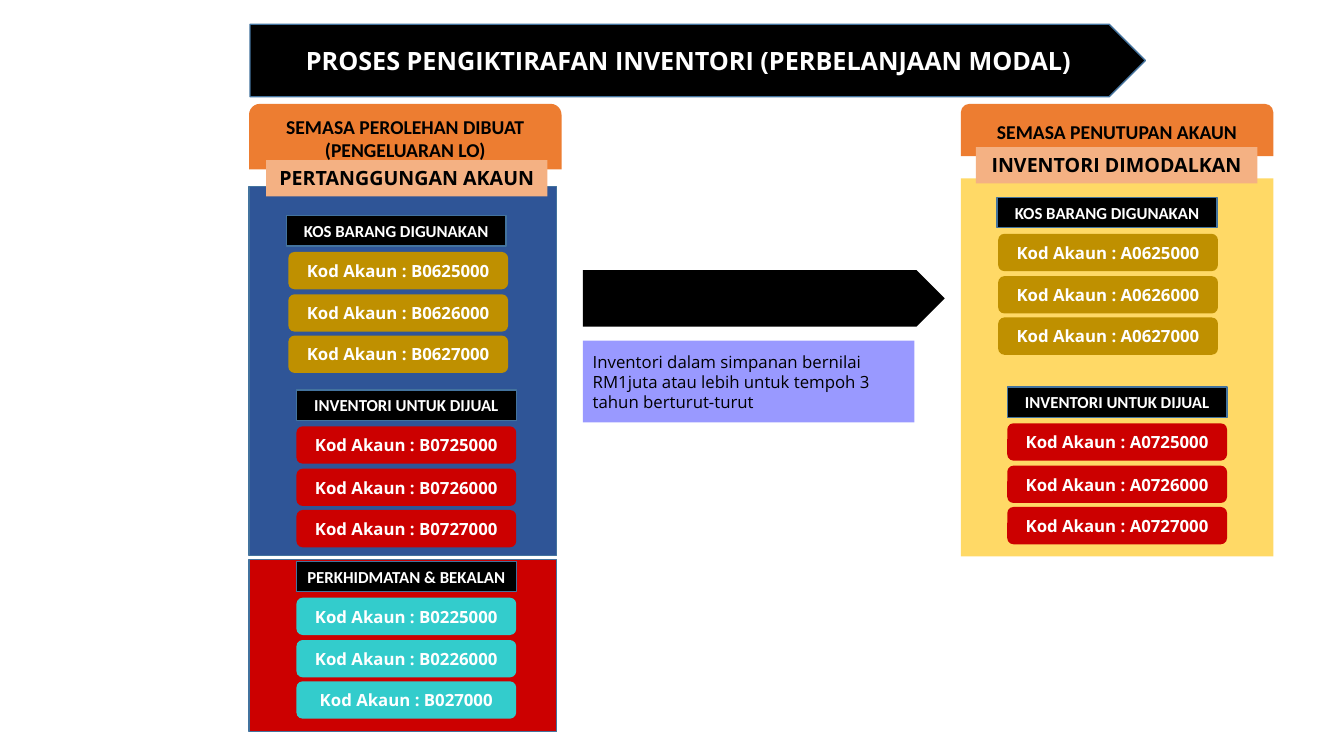
from dataclasses import dataclass

from pptx import Presentation
from pptx.dml.color import RGBColor
from pptx.enum.shapes import MSO_SHAPE
from pptx.enum.text import MSO_ANCHOR, PP_ALIGN
from pptx.util import Emu, Pt

RECT, ROUND = MSO_SHAPE.RECTANGLE, MSO_SHAPE.ROUNDED_RECTANGLE
TAB, ARROW = MSO_SHAPE.ROUND_2_SAME_RECTANGLE, MSO_SHAPE.PENTAGON
TOP, MIDDLE = MSO_ANCHOR.TOP, MSO_ANCHOR.MIDDLE
LEFT, CENTER = PP_ALIGN.LEFT, PP_ALIGN.CENTER
PX = 9144  # 100 px to the inch


@dataclass(frozen=True)
class Theme:
    black: str = "000000"
    white: str = "FFFFFF"
    outline: str = "43739E"
    orange: str = "ED7D31"
    peach: str = "F4B183"
    blue: str = "2F5597"
    yellow: str = "FFD966"
    red: str = "CC0000"
    gold: str = "BF9000"
    teal: str = "33CCCC"
    lilac: str = "9999FF"
    label_font: str = "Calibri"
    code_font: str = "Open Sans"
    title_size: int = 18
    header_size: int = 14
    body_size: int = 12


T = Theme()


def px(n):
    return Emu(n * PX)


def add_box(s, kind, box, fill, outlined=False):
    sp = s.shapes.add_shape(kind, *map(px, box))
    sp.shadow.inherit = False
    sp.fill.solid()
    sp.fill.fore_color.rgb = RGBColor.from_string(fill)
    if outlined:
        sp.line.color.rgb = RGBColor.from_string(T.outline)
        sp.line.width = Pt(1)
    else:
        sp.line.fill.background()
    return sp


def write(sp, text, font, size, color, bold=True, align=CENTER, anchor=MIDDLE, inset=(10, 5)):
    tf = sp.text_frame
    tf.word_wrap = True
    tf.vertical_anchor = anchor
    tf.margin_left = tf.margin_right = px(inset[0])
    tf.margin_top = tf.margin_bottom = px(inset[1])
    p = tf.paragraphs[0]
    p.text = text
    p.alignment = align
    p.font.name, p.font.size, p.font.bold = font, Pt(size), bold
    p.font.color.rgb = RGBColor.from_string(color)


def add_title(s, box, text):
    sp = add_box(s, ARROW, box, T.black, outlined=True)
    write(sp, text, T.code_font, T.title_size, T.white)


def add_stage(s, box, header_h, header, tag_dx, tag):
    """Rounded header with a tag overlapping its lower edge."""
    x, y, w = box
    sp = add_box(s, TAB, (x, y, w, header_h), T.orange)
    write(sp, header, T.label_font, T.header_size, T.black, inset=(12, 6))
    sp = add_box(s, RECT, (x + tag_dx, y + header_h - 9, 279, 36), T.peach)
    write(sp, tag, T.code_font, T.header_size, T.black, anchor=TOP, inset=(12, 6))


def add_code_group(s, origin, label, codes, fill, shift=0):
    """Black label above a stack of account codes."""
    x, y = origin
    sp = add_box(s, RECT, (x, y, 218, 30), T.black, outlined=True)
    write(sp, label, T.label_font, T.body_size, T.white)
    for i, code in enumerate(codes):
        top = y + 36 + (83 * i + 1) // 2
        sp = add_box(s, ROUND, (x + shift, top, 218, 37), fill)
        write(sp, f"Kod Akaun : {code}", T.code_font, T.body_size, T.white)


def add_transition(s, box, note):
    """Arrow between the stages with its condition below."""
    x, y, w = box
    add_box(s, ARROW, (x, y, w, 56), T.black)
    sp = add_box(s, RECT, (x, y + 70, w - 30, 81), T.lilac)
    write(sp, note, T.code_font, T.body_size, T.black, bold=False, align=LEFT)


def main():
    prs = Presentation()
    prs.slide_width, prs.slide_height = px(1333), px(750)
    s = prs.slides.add_slide(prs.slide_layouts[6])

    add_title(s, (248, 24, 888, 72), "PROSES PENGIKTIRAFAN INVENTORI (PERBELANJAAN MODAL)")

    # Panels behind the account codes
    add_box(s, RECT, (247, 555, 305, 171), T.red, outlined=True)
    add_box(s, RECT, (247, 185, 305, 366), T.blue, outlined=True)
    add_box(s, RECT, (953, 177, 310, 375), T.yellow)

    # Stage headings
    add_stage(s, (247, 103, 310), 65, "SEMASA PEROLEHAN DIBUAT (PENGELUARAN LO)",
              17, "PERTANGGUNGAN AKAUN")
    add_stage(s, (953, 103, 310), 52, "SEMASA PENUTUPAN AKAUN",
              15, "INVENTORI DIMODALKAN")

    # Inventory codes, before and after capitalisation
    for prefix, x, kos_y, dijual_y, shift in (("B", 284, 214, 387, 2), ("A", 989, 196, 384, 1)):
        kos = [f"{prefix}062{n}000" for n in (5, 6, 7)]
        dijual = [f"{prefix}072{n}000" for n in (5, 6, 7)]
        add_code_group(s, (x, kos_y), "KOS BARANG DIGUNAKAN", kos, T.gold, shift)
        add_code_group(s, (x + 10, dijual_y), "INVENTORI UNTUK DIJUAL", dijual, T.red)

    # Services and supplies codes
    add_code_group(s, (294, 557), "PERKHIDMATAN & BEKALAN",
                   ["B0225000", "B0226000", "B027000"], T.teal)

    add_transition(s, (578, 268, 359),
                   "Inventori dalam simpanan bernilai RM1juta atau lebih "
                   "untuk tempoh 3 tahun berturut-turut")

    prs.save("out.pptx")


if __name__ == "__main__":
    main()
